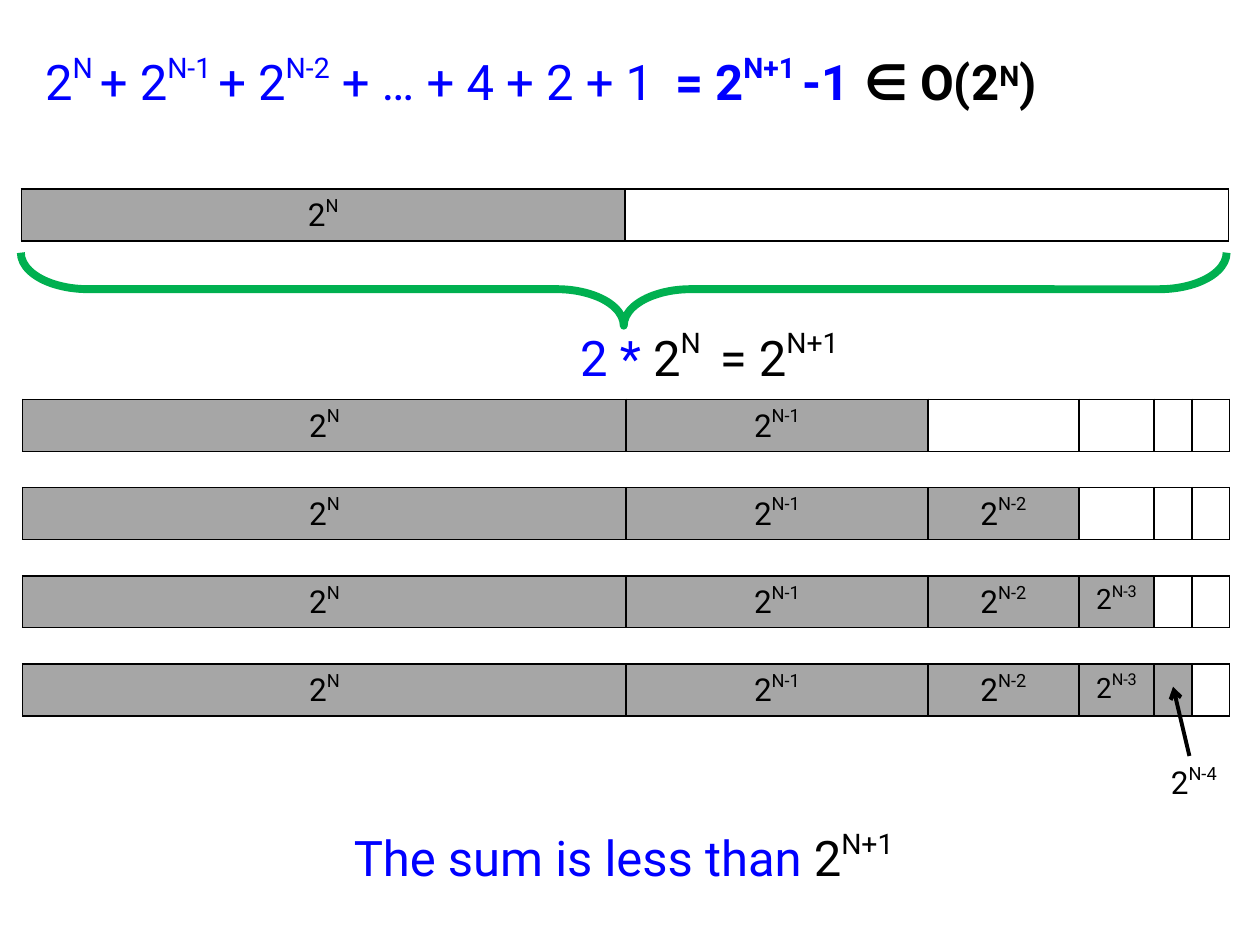
"""Build a slide that shows why the sum of the powers of two stays below 2^(N+1)."""
from dataclasses import dataclass, field
from typing import Any

from lxml.etree import SubElement as Sub
from pptx import Presentation
from pptx.dml.color import RGBColor as Rgb
from pptx.enum.shapes import MSO_CONNECTOR as Link, MSO_SHAPE as Shape
from pptx.enum.text import MSO_ANCHOR as Anchor, MSO_AUTO_SIZE as Auto, PP_ALIGN as Align
from pptx.oxml.ns import qn
from pptx.util import Inches, Pt

WIDE, HIGH = Inches(10), Inches(7.5)
COLS, ROWS = 10, 7.5


@dataclass(frozen=True)
class Theme:
    font: str = "Roboto"
    ink: Rgb = Rgb(0, 0, 0)
    blue: Rgb = Rgb(0, 0, 255)
    gray: Rgb = Rgb(166, 166, 166)
    green: Rgb = Rgb(0, 176, 80)
    big: int = 28
    mid: int = 18
    small: int = 16


THEME = Theme()


@dataclass(frozen=True)
class Run:
    text: str
    color: Rgb = THEME.ink
    up: int = 0
    bold: bool = False


@dataclass(frozen=True)
class Box:
    x: float
    y: float
    w: float
    h: float


@dataclass(frozen=True)
class Bar:
    x: float
    y: float
    shares: tuple[float, ...]
    full: int


@dataclass(frozen=True)
class Note:
    box: Box
    runs: tuple[Run, ...]
    size: int = THEME.big
    frame: dict[str, Any] = field(default_factory=dict)
    para: dict[str, Any] = field(default_factory=dict)


SPAN, TALL = 9.58, 0.41
HALVES = (1 / 2, 1 / 2)
SPLIT = tuple(1 / 2 ** n for n in range(1, 6)) + (1 / 32,)
BARS = [Bar(0.17, 1.5, HALVES, 1)] + [
    Bar(0.18, 3.17 + 0.7 * n, SPLIT, n + 2) for n in range(4)]


def col(n: float) -> int:
    """Turn grid columns into a length."""
    return round(WIDE * n / COLS)


def row(n: float) -> int:
    """Turn grid rows into a length."""
    return round(HIGH * n / ROWS)


def place(box: Box) -> tuple[int, int, int, int]:
    """Turn a grid box into left, top, width and height."""
    return col(box.x), row(box.y), col(box.w), row(box.h)


def apply(item: Any, look: dict[str, Any]) -> None:
    """Set each named attribute of an item."""
    for name, value in look.items():
        setattr(item, name, value)


def power(top: str, color: Rgb = THEME.ink) -> tuple[Run, Run]:
    """Give the runs of two raised to an exponent."""
    return Run("2", color), Run(top, color, 46)


def write(para: Any, runs: tuple[Run, ...], size: int) -> None:
    """Add styled runs to a paragraph."""
    for piece in runs:
        run = para.add_run()
        run.text = piece.text
        apply(run.font, {"name": THEME.font, "size": Pt(size), "bold": piece.bold})
        run.font.color.rgb = piece.color
        if piece.up:
            run._r.get_or_add_rPr().set("baseline", str(piece.up * 1000))


def edge(cell: Any) -> None:
    """Give a cell a thin line on all four sides."""
    props = cell._tc.get_or_add_tcPr()
    for side in ("lnL", "lnR", "lnT", "lnB"):
        line = Sub(props, qn(f"a:{side}"), w=str(Pt(1)))
        Sub(Sub(line, qn("a:solidFill")), qn("a:srgbClr"), val=str(THEME.ink))


def draw_bar(shapes: Any, bar: Bar) -> None:
    """Draw one bar whose first cells are filled and named."""
    box = Box(bar.x, bar.y, SPAN, TALL)
    table = shapes.add_table(1, len(bar.shares), *place(box)).table
    apply(table, {"first_row": False, "horz_banding": False})
    for n, share in enumerate(bar.shares):
        table.columns[n].width = col(SPAN * share)
        cell = table.cell(0, n)
        edge(cell)
        if n >= bar.full:
            cell.fill.background()
            continue
        cell.fill.solid()
        cell.fill.fore_color.rgb = THEME.gray
        if n < 4:
            para = cell.text_frame.paragraphs[0]
            para.alignment = Align.CENTER
            write(para, power(f"N-{n}" if n else "N"), THEME.small if n == 3 else THEME.mid)


def draw_note(shapes: Any, note: Note) -> None:
    """Draw one line of free text."""
    frame = shapes.add_textbox(*place(note.box)).text_frame
    base = {"word_wrap": True, "vertical_anchor": Anchor.MIDDLE,
            "auto_size": Auto.SHAPE_TO_FIT_TEXT}
    apply(frame, base | note.frame)
    para = frame.paragraphs[0]
    apply(para, {"alignment": Align.CENTER} | note.para)
    write(para, note.runs, note.size)


def draw_brace(shapes: Any, box: Box) -> None:
    """Draw the brace under the first bar."""
    brace = shapes.add_shape(Shape.RIGHT_BRACE, *place(box))
    brace.rotation = 90
    brace.adjustments[0] = 0.92
    brace.shadow.inherit = False
    brace.fill.background()
    brace.line.color.rgb = THEME.green
    brace.line.width = Pt(4.5)


def draw_arrow(shapes: Any, start: tuple[float, float], end: tuple[float, float]) -> None:
    """Draw an arrow between two grid points."""
    ends = (col(start[0]), row(start[1]), col(end[0]), row(end[1]))
    arrow = shapes.add_connector(Link.STRAIGHT, *ends)
    arrow.line.color.rgb = THEME.ink
    arrow.line.width = Pt(2.25)
    Sub(arrow.line._get_or_add_ln(), qn("a:tailEnd"), type="arrow")
    Sub(arrow._element.spPr, qn("a:effectLst"))


def main() -> None:
    """Build and save the slide."""
    blue = THEME.blue
    sum_runs = (
        *power("N ", blue), Run("+ ", blue), *power("N-1 ", blue), Run("+ ", blue),
        *power("N-2", blue), Run(" + … + 4 + 2 + 1\t", blue), Run("= 2", blue, 0, True),
        Run("N+1 ", blue, 46, True), Run("-1\t", blue, 0, True),
        Run("∈ O(2", bold=True), Run("N", up=30, bold=True), Run(")", bold=True))
    notes = (
        Note(Box(0.26, 0.48, 10.32, 0.44), sum_runs,
             para={"alignment": Align.LEFT, "line_spacing": 0.7}),
        Note(Box(3.67, 2.54, 3.92, 0.57),
             (Run("2 *", blue), Run(" "), *power("N "), Run(" = "), *power("N+1"))),
        Note(Box(9.17, 6, 0.61, 0.4), power("N-4"), THEME.mid,
             {"word_wrap": False, "vertical_anchor": Anchor.TOP}),
        Note(Box(1.6, 6.51, 6.7, 0.57),
             (Run("The sum is less than ", blue), *power("N+1"))))
    deck = Presentation()
    apply(deck, {"slide_width": WIDE, "slide_height": HIGH})
    shapes = deck.slides.add_slide(deck.slide_layouts[6]).shapes
    for bar in BARS:
        draw_bar(shapes, bar)
    draw_brace(shapes, Box(4.66, -2.49, 0.58, 9.57))
    for note in notes:
        draw_note(shapes, note)
    draw_arrow(shapes, (9.44, 6), (9.31, 5.45))
    deck.save("out.pptx")


if __name__ == "__main__":
    main()
